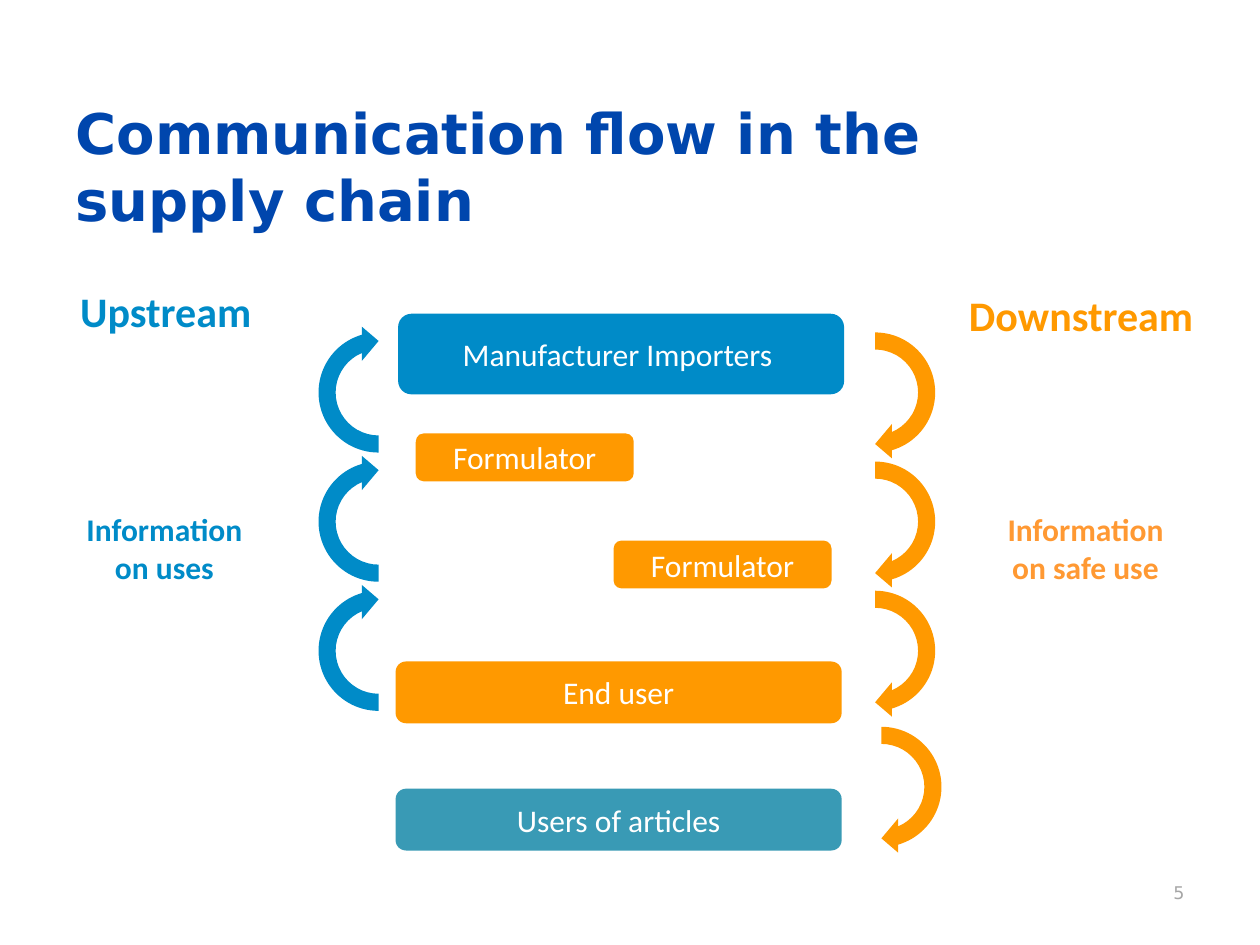
from dataclasses import dataclass

from pptx import Presentation
from pptx.dml.color import RGBColor
from pptx.enum.shapes import MSO_SHAPE as Preset
from pptx.enum.text import MSO_ANCHOR as Anchor, PP_ALIGN as Align
from pptx.util import Inches, Pt


@dataclass(frozen=True)
class Theme:
    heading_font: str = "DejaVu Sans"
    body_font: str = "Calibri"
    navy: str = "0046AD"
    blue: str = "008BC8"
    orange: str = "FF9900"
    light_orange: str = "FF9933"
    teal: str = "399AB5"
    grey: str = "A6A6A6"
    white: str = "FFFFFF"
    title_size: int = 32
    direction_size: int = 24
    body_size: int = 18
    number_size: int = 10


THEME = Theme()
ARROW_SIZE = 1.09
ARROW_TOP = 2.57
ARROW_STEP = 1.025


def write_text(frame, text, *, color, size=THEME.body_size, font=THEME.body_font,
               bold=False, align=Align.CENTER, anchor=Anchor.TOP):
    frame.text = text
    frame.word_wrap = True
    frame.vertical_anchor = anchor
    for paragraph in frame.paragraphs:
        paragraph.alignment = align
        for run in paragraph.runs:
            run.font.name = font
            run.font.size = Pt(size)
            run.font.bold = bold
            run.font.color.rgb = RGBColor.from_string(color)


def place(element, left, top, width, height):
    element.left, element.top = Inches(left), Inches(top)
    element.width, element.height = Inches(width), Inches(height)


def add_title(slide, text):
    title = slide.shapes.title
    place(title, 0.5, 0.69, 9, 1.25)
    write_text(title.text_frame, text, color=THEME.navy, size=THEME.title_size,
               font=THEME.heading_font, bold=True, align=Align.LEFT,
               anchor=Anchor.MIDDLE)


def add_label(slide, text, box, **text_format):
    label = slide.shapes.add_textbox(*map(Inches, box))
    write_text(label.text_frame, text, **text_format)


def add_filled(slide, preset, box, color):
    filled = slide.shapes.add_shape(preset, *map(Inches, box))
    filled.shadow.inherit = False
    filled.fill.solid()
    filled.fill.fore_color.rgb = RGBColor.from_string(color)
    filled.line.fill.background()
    return filled


def add_actor(slide, text, box, color):
    actor = add_filled(slide, Preset.ROUNDED_RECTANGLE, box, color)
    write_text(actor.text_frame, text, color=THEME.white, anchor=Anchor.MIDDLE)


def add_flow_arrow(slide, left, top, color, rotation):
    box = (left, top, ARROW_SIZE, ARROW_SIZE)
    add_filled(slide, Preset.CIRCULAR_ARROW, box, color).rotation = rotation


def main():
    deck = Presentation()
    deck.slide_width, deck.slide_height = Inches(10), Inches(7.5)
    slide = deck.slides.add_slide(deck.slide_layouts[5])

    add_title(slide, "Communication flow in the\vsupply chain")
    add_label(slide, "5", (7.17, 6.95, 2.33, 0.4), color=THEME.grey,
              size=THEME.number_size, font=THEME.heading_font, align=Align.RIGHT)

    for text, box, color, size in (
        ("Upstream", (0.23, 2.22, 2.17, 0.5), THEME.blue, THEME.direction_size),
        ("Downstream", (7.36, 2.25, 2.44, 0.5), THEME.orange, THEME.direction_size),
        ("Information\non uses", (0.4, 4, 1.81, 0.71), THEME.blue, THEME.body_size),
        ("Information\non safe use", (7.59, 4, 2.05, 0.71), THEME.light_orange,
         THEME.body_size),
    ):
        add_label(slide, text, box, color=color, size=size, bold=True)

    for text, box, color in (
        ("Manufacturer Importers ", (3.16, 2.49, 3.54, 0.64), THEME.blue),
        ("Formulator", (3.3, 3.44, 1.73, 0.38), THEME.orange),
        ("Formulator", (4.87, 4.29, 1.73, 0.38), THEME.orange),
        ("End user", (3.14, 5.25, 3.54, 0.49), THEME.orange),
        ("Users of articles", (3.14, 6.26, 3.54, 0.49), THEME.teal),
    ):
        add_actor(slide, text, box, color)

    for level in range(3):
        top = ARROW_TOP + level * ARROW_STEP
        add_flow_arrow(slide, 2.46, top, THEME.blue, 270)
        add_flow_arrow(slide, 6.4, top, THEME.orange, 90)
    add_flow_arrow(slide, 6.45, 5.7, THEME.orange, 90)

    deck.save("out.pptx")


if __name__ == "__main__":
    main()
